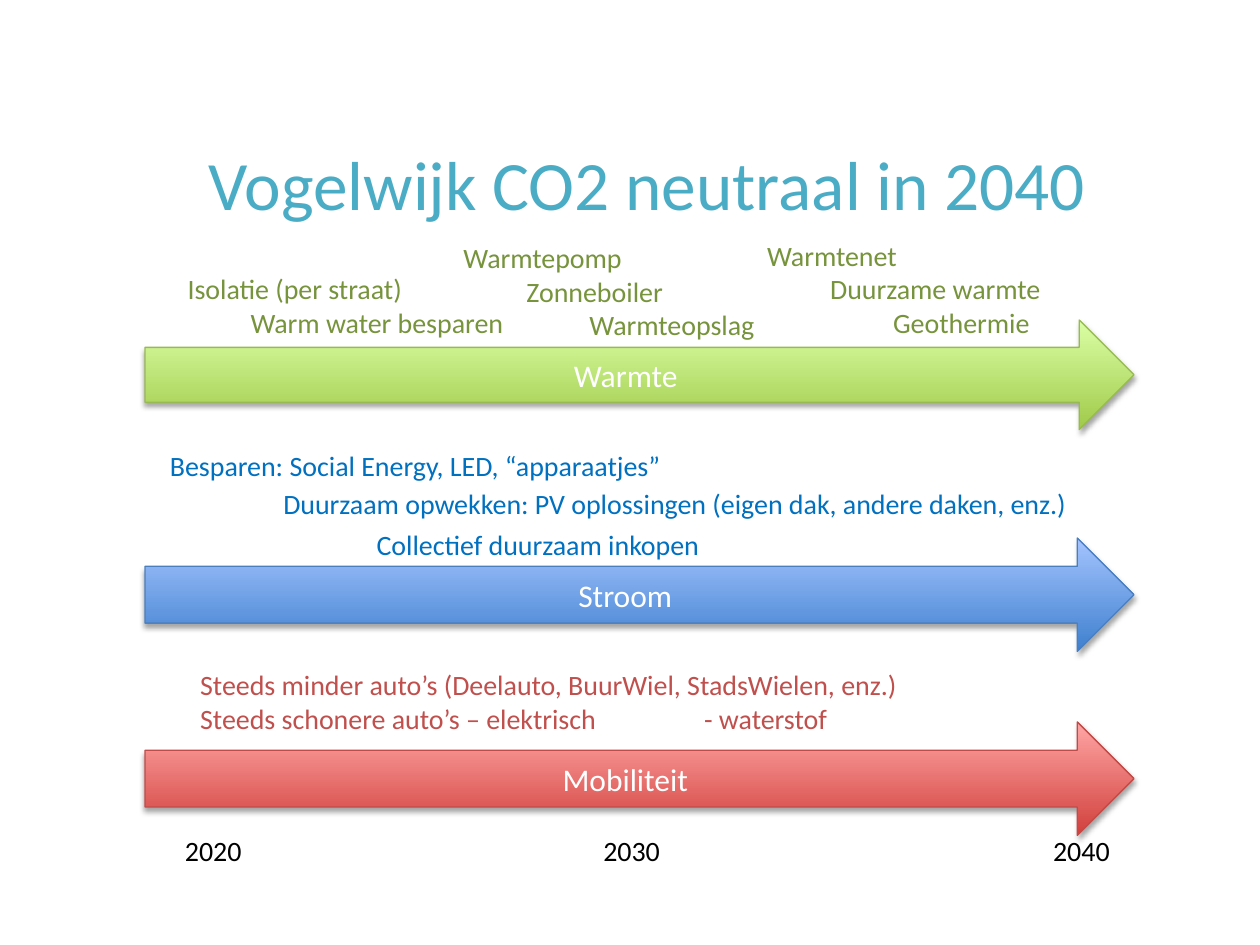
from lxml import etree
from pptx import Presentation
from pptx import util as u
from pptx.dml.color import RGBColor
from pptx.enum import shapes, text
from pptx.oxml.ns import qn

TEAL = RGBColor(0x4B, 0xAC, 0xC6)
GREEN = RGBColor(0x77, 0x93, 0x3C)
BLUE = RGBColor(0x00, 0x70, 0xC0)
RED = RGBColor(0xC0, 0x50, 0x4D)
BLACK = RGBColor(0x00, 0x00, 0x00)
WHITE = RGBColor(0xFF, 0xFF, 0xFF)
GREEN_ARROW = (RGBColor(0xA0, 0xCA, 0x4A), RGBColor(0xDA, 0xFF, 0xA5), RGBColor(0x98, 0xB9, 0x55))
BLUE_ARROW = (RGBColor(0x3F, 0x80, 0xCE), RGBColor(0xA4, 0xC4, 0xFF), RGBColor(0x4B, 0x7E, 0xBC))
RED_ARROW = (RGBColor(0xD1, 0x40, 0x3C), RGBColor(0xFF, 0xA6, 0xA5), RGBColor(0xBF, 0x4C, 0x48))

COLUMNS, ROWS = 100, 75
ARROW_LEFT, ARROW_WIDTH = 11.5, 78.5
LINE_HEIGHT, BOX_PADDING = 2.7, 1


class RoadmapSlide:
    font = "Calibri"
    title_size, arrow_size, note_size = 39.6, 18, 16

    def __init__(self, presentation):
        self.cell_width = presentation.slide_width / COLUMNS
        self.cell_height = presentation.slide_height / ROWS
        self.slide = presentation.slides.add_slide(presentation.slide_layouts[5])

    def place(self, column, row, width, height):
        return (round(column * self.cell_width), round(row * self.cell_height),
                round(width * self.cell_width), round(height * self.cell_height))

    def set_lines(self, shape, lines, size, color, alignment):
        frame = shape.text_frame
        frame.text = "\n".join(lines)
        for paragraph in frame.paragraphs:
            paragraph.alignment = alignment
            for run in paragraph.runs:
                run.font.name = self.font
                run.font.size = u.Pt(size)
                run.font.color.rgb = color
        return frame

    def title(self, wording, *area):
        shape = self.slide.shapes.title
        shape.left, shape.top, shape.width, shape.height = self.place(*area)
        frame = self.set_lines(shape, [wording], self.title_size, TEAL, text.PP_ALIGN.CENTER)
        frame.vertical_anchor = text.MSO_ANCHOR.MIDDLE

    def arrow(self, label, row, height, colors):
        bottom, top, outline = colors
        shape = self.slide.shapes.add_shape(
            shapes.MSO_SHAPE.RIGHT_ARROW, *self.place(ARROW_LEFT, row, ARROW_WIDTH, height))
        shape.fill.gradient()
        shape.fill.gradient_angle = 90
        for stop, color in zip(shape.fill.gradient_stops, (bottom, top)):
            stop.color.rgb = color
        shape.line.color.rgb = outline
        shape.line.width = u.Pt(0.75)
        self.drop_shadow(shape)
        frame = self.set_lines(shape, [label], self.arrow_size, WHITE, text.PP_ALIGN.CENTER)
        frame.vertical_anchor = text.MSO_ANCHOR.MIDDLE

    def drop_shadow(self, shape):
        shape.shadow.inherit = False
        effects = shape.element.spPr.find(qn("a:effectLst"))
        shadow = etree.SubElement(effects, qn("a:outerShdw"), blurRad=str(u.Pt(3.1)),
                                  dist=str(u.Pt(1.8)), dir="5400000", rotWithShape="0")
        color = etree.SubElement(shadow, qn("a:srgbClr"), val="000000")
        etree.SubElement(color, qn("a:alpha"), val="35000")

    def note(self, column, row, width, color, *lines):
        height = LINE_HEIGHT * len(lines) + BOX_PADDING
        shape = self.slide.shapes.add_textbox(*self.place(column, row, width, height))
        frame = self.set_lines(shape, lines, self.note_size, color, text.PP_ALIGN.LEFT)
        frame.word_wrap = False
        frame.auto_size = text.MSO_AUTO_SIZE.SHAPE_TO_FIT_TEXT


def main():
    presentation = Presentation()
    presentation.slide_width = u.Inches(10)
    presentation.slide_height = u.Inches(7.5)
    roadmap = RoadmapSlide(presentation)

    roadmap.title("Vogelwijk CO2 neutraal in 2040", 11.2, 11.5, 80.3, 6)

    roadmap.arrow("Stroom", 42.7, 9, BLUE_ARROW)
    roadmap.arrow("Warmte", 25.4, 8.7, GREEN_ARROW)
    roadmap.note(13.9, 21.1, 27.4, GREEN, "Isolatie (per straat)", "\tWarm water besparen")
    roadmap.note(35.8, 18.6, 25.4, GREEN, "Warmtepomp", "\tZonneboiler", "\t\tWarmteopslag")
    roadmap.note(59.9, 18.4, 24, GREEN, "Warmtenet", "\tDuurzame warmte", "\t\tGeothermie")

    for year, column in (("2020", 13.7), ("2030", 46.9), ("2040", 82.6)):
        roadmap.note(column, 65.7, 6.6, BLACK, year)

    roadmap.note(12.5, 35.1, 41.5, BLUE, "Besparen: Social Energy, LED, “apparaatjes”")
    roadmap.note(21.5, 38.1, 64.4, BLUE,
                 "Duurzaam opwekken: PV oplossingen (eigen dak, andere daken, enz.)")
    roadmap.arrow("Mobiliteit", 57.3, 9, RED_ARROW)
    roadmap.note(14.9, 52.5, 60.9, RED,
                 "Steeds minder auto’s (Deelauto, BuurWiel, StadsWielen, enz.)",
                 "Steeds schonere auto’s – elektrisch \t\t- waterstof")
    roadmap.note(28.9, 41.4, 27.9, BLUE, "Collectief duurzaam inkopen")

    presentation.save("out.pptx")


if __name__ == "__main__":
    main()
